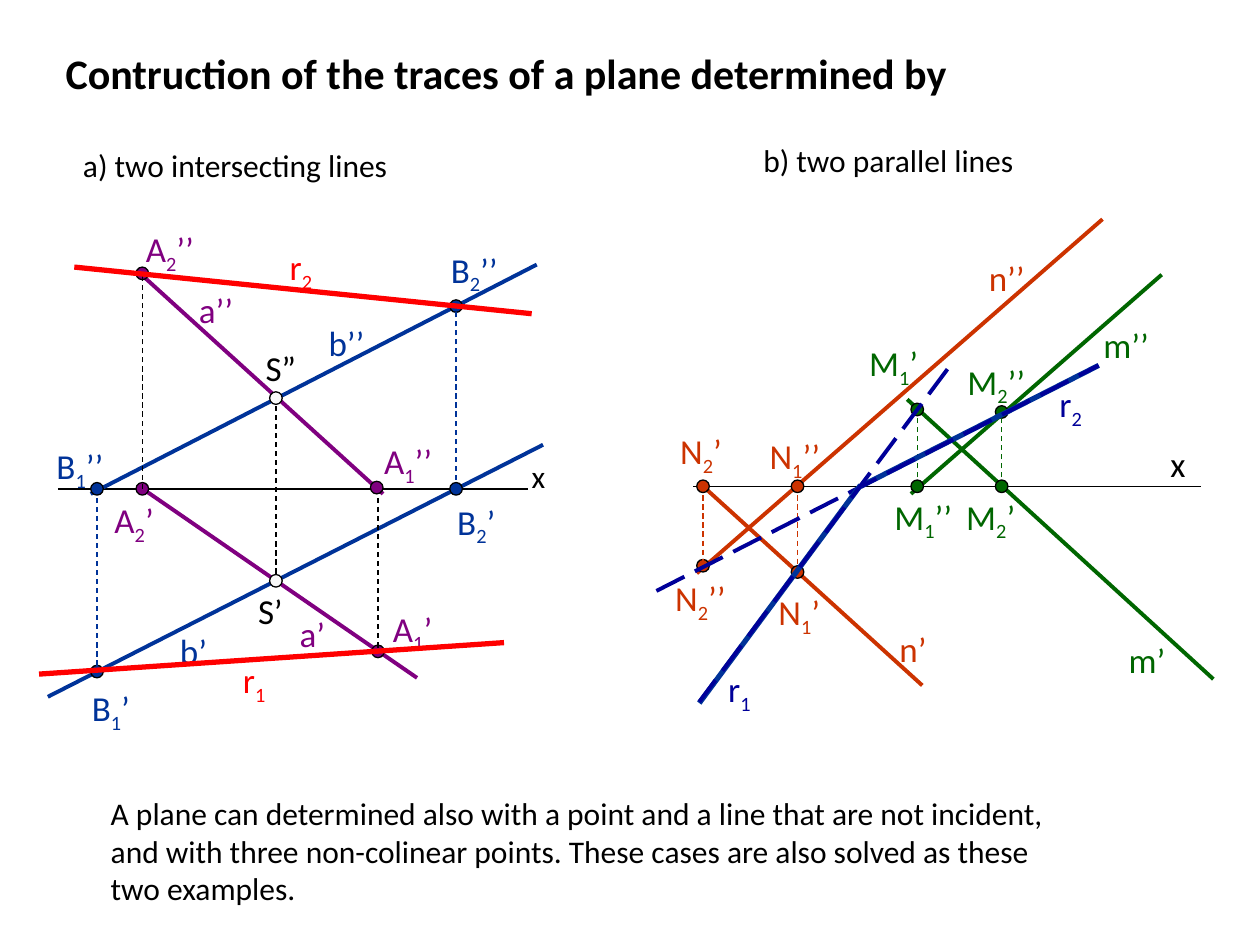
from lxml import etree
from pptx import Presentation
from pptx.dml.color import RGBColor
from pptx.enum import dml, shapes, text
from pptx.oxml.ns import qn
from pptx.util import Inches, Pt

FONT = "Calibri"
COLORS = {
    "black": "000000", "white": "F8F8F8", "purple": "800080", "blue": "003399",
    "red": "FF0000", "orange": "CC3300", "green": "006600", "navy": "000099",
}
DOT = 0.1
LABEL_HEIGHT = 0.44

TITLE = "Contruction of the traces of a plane determined by"
CLOSING = ("A plane can determined also with a point and a line that are not incident, "
           "and with three non-colinear points. These cases are also solved as these "
           "two examples.")

# lines: start, end, colour, width, dash
# points: letter, index, primes, colour, centre, label left/top/width, projection end
# labels: name, index, colour, left/top/width
INTERSECTING = {
    "caption": ("a) two intersecting lines", 0.56, 1.11, 3.35),
    "axis": ((0.46, 3.88), (4.19, 3.88)),
    "axis_label": (18, 4.12, 3.58, 0.41, 0.37),
    "lines": [
        ((0.72, 3.92), (4.26, 2.1), "blue", 2.25, None),
        ((0.38, 5.53), (4.31, 3.53), "blue", 2.25, None),
        ((1.09, 2.15), (3.04, 3.92), "purple", 2.25, None),
        ((2.19, 3.15), (2.19, 4.61), "black", 0.75, "DASH"),
        ((1.09, 3.85), (3.31, 5.38), "purple", 2.25, None),
    ],
    "labels": [
        ("a’’", "", "purple", (1.48, 2.24, 0.54)),
        ("a’", "", "purple", (2.28, 4.81, 0.45)),
        ("b’", "", "blue", (1.33, 4.95, 0.43)),
        ("b’’", "", "blue", (2.51, 2.5, 0.53)),
    ],
    "points": [
        ("A", "1", "’", "purple", (3.0, 5.17), (3.02, 4.77, 0.61), "black"),
        ("A", "1", "’’", "purple", (2.99, 3.87), (2.95, 3.44, 0.64), None),
        ("A", "2", "’", "purple", (1.13, 3.88), (0.81, 3.91, 0.58), None),
        ("A", "2", "’’", "purple", (1.13, 2.17), (1.06, 1.76, 0.6), "black"),
        ("B", "2", "’", "blue", (3.62, 3.88), (3.53, 3.92, 0.61), None),
        ("B", "2", "’’", "blue", (3.62, 2.43), (3.48, 1.92, 0.6), "blue"),
        ("B", "1", "’’", "blue", (0.77, 3.88), (0.35, 3.48, 0.64), None),
        ("B", "1", "’", "blue", (0.77, 5.33), (0.63, 5.4, 0.59), "blue"),
    ],
    "traces": [
        ((0.31, 5.35), (4, 5.1), "red", 3, None),
        ((0.59, 2.12), (4.22, 2.49), "red", 3, None),
    ],
    "trace_labels": [
        ("r", "1", "red", (1.83, 5.18, 0.61)),
        ("r", "2", "red", (2.2, 1.9, 0.61)),
    ],
}
PARALLEL = {
    "caption": ("b) two parallel lines", 5.96, 1.07, 3.43),
    "axis": ((5.5, 3.86), (9.53, 3.86)),
    "axis_label": (20, 9.19, 3.46, 0.51, 0.44),
    "lines": [
        ((8.75, 1.74), (5.53, 4.55), "orange", 2.25, None),
        ((9.22, 2.18), (7.23, 3.92), "green", 2.25, None),
        ((7.2, 3.17), (9.63, 5.39), "green", 2.25, None),
        ((5.57, 3.85), (7.32, 5.44), "orange", 2.25, None),
    ],
    "labels": [
        ("m’", "", "green", (8.86, 5.02, 0.55)),
        ("m’’", "", "green", (8.66, 2.52, 0.56)),
        ("n’", "", "orange", (7.04, 4.93, 0.45)),
        ("n’’", "", "orange", (7.75, 1.99, 0.6)),
    ],
    "points": [
        ("N", "1", "’’", "orange", (6.33, 3.86), (6.01, 3.4, 0.63), None),
        ("N", "1", "’", "orange", (6.33, 4.54), (6.08, 4.64, 0.56), "orange"),
        ("N", "2", "’", "orange", (5.58, 3.86), (5.3, 3.36, 0.6), None),
        ("N", "2", "’’", "orange", (5.58, 4.49), (5.26, 4.53, 0.62), "orange"),
        ("M", "1", "’’", "green", (7.28, 3.86), (7, 3.88, 0.81), None),
        ("M", "1", "’", "green", (7.28, 3.25), (6.8, 2.66, 0.68), "green"),
        ("M", "2", "’", "green", (7.95, 3.86), (7.57, 3.88, 0.71), None),
        ("M", "2", "’’", "green", (7.95, 3.27), (7.58, 2.81, 0.7), "green"),
    ],
    "traces": [
        ((6.83, 3.86), (8.72, 2.9), "blue", 3, None),
        ((5.21, 4.69), (8.72, 2.9), "navy", 2.25, "LONG_DASH"),
        ((6.83, 3.85), (5.55, 5.58), "blue", 3, None),
        ((7.52, 2.93), (5.55, 5.57), "navy", 2.25, "LONG_DASH"),
    ],
    "trace_labels": [
        ("r", "2", "navy", (8.31, 2.99, 0.68)),
        ("r", "1", "navy", (5.68, 5.25, 0.42)),
    ],
}
INTERSECTIONS = [
    ("S”", (2.19, 3.16), (2.01, 2.7, 0.65)),
    ("S’", (2.19, 4.61), (1.95, 4.63, 0.43)),
]


def rgb(color):
    return RGBColor.from_string(COLORS[color])


def add_run(paragraph, words, size, color="black", bold=False, subscript=False):
    run = paragraph.add_run()
    run.text = words
    run.font.name, run.font.size, run.font.bold = FONT, Pt(size), bold
    run.font.color.rgb = rgb(color)
    if subscript:
        run.font._element.set("baseline", "-25000")


def add_text(slide, parts, left, top, width, height, size=20, color="black"):
    box = slide.shapes.add_textbox(*map(Inches, (left, top, width, height)))
    box.text_frame.word_wrap = True
    for words, subscript in parts:
        if words:
            add_run(box.text_frame.paragraphs[0], words, size, color, subscript=subscript)


def add_label(slide, name, index, primes, color, place):
    parts = [(name, False), (index, True), (primes, False)]
    add_text(slide, parts, *place, LABEL_HEIGHT, color=color)


def add_line(slide, start, end, color, width, dash=None):
    line = slide.shapes.add_connector(
        shapes.MSO_CONNECTOR.STRAIGHT, *map(Inches, (*start, *end)))
    line.line.color.rgb = rgb(color)
    line.line.width = Pt(width)
    if dash:
        line.line.dash_style = dml.MSO_LINE[dash]
    etree.SubElement(line._element.spPr, qn("a:effectLst"))


def add_dot(slide, center, color):
    x, y = center
    dot = slide.shapes.add_shape(
        shapes.MSO_SHAPE.OVAL, *map(Inches, (x - DOT / 2, y - DOT / 2, DOT, DOT)))
    dot.shadow.inherit = False
    dot.fill.solid()
    dot.fill.fore_color.rgb = rgb(color)
    dot.line.color.rgb = rgb("black")
    dot.line.width = Pt(0.75)


def add_figure(slide, figure):
    caption, left, top, width = figure["caption"]
    add_text(slide, [(caption, False)], left, top, width, 0.4, size=18)
    add_line(slide, *figure["axis"], "black", 0.75)
    size, *place = figure["axis_label"]
    add_text(slide, [("x", False)], *place, size=size)
    for line in figure["lines"]:
        add_line(slide, *line)
    for name, index, color, place in figure["labels"]:
        add_label(slide, name, index, "", color, place)
    axis_y = figure["axis"][0][1]
    for name, index, primes, color, center, place, projection in figure["points"]:
        add_dot(slide, center, color)
        if projection:
            add_line(slide, (center[0], axis_y), center, projection, 0.75, "DASH")
        add_label(slide, name, index, primes, color, place)
    for trace in figure["traces"]:
        add_line(slide, *trace)
    for name, index, color, place in figure["trace_labels"]:
        add_label(slide, name, index, "", color, place)


def main():
    deck = Presentation()
    deck.slide_width, deck.slide_height = Inches(10), Inches(7.5)
    slide = deck.slides.add_slide(deck.slide_layouts[5])

    title = slide.shapes.title
    title.left, title.top, title.width, title.height = map(Inches, (0.42, 0.33, 7.24, 0.44))
    title.text_frame.vertical_anchor = text.MSO_ANCHOR.TOP
    title.text_frame.auto_size = text.MSO_AUTO_SIZE.NONE
    heading = title.text_frame.paragraphs[0]
    heading.alignment = text.PP_ALIGN.LEFT
    add_run(heading, TITLE, 24, bold=True)

    for figure in (INTERSECTING, PARALLEL):
        add_figure(slide, figure)
    for name, center, place in INTERSECTIONS:
        add_dot(slide, center, "white")
        add_label(slide, name, "", "", "black", place)
    add_text(slide, [(CLOSING, False)], 0.78, 6.25, 7.81, 1.01, size=18)
    deck.save("out.pptx")


if __name__ == "__main__":
    main()
